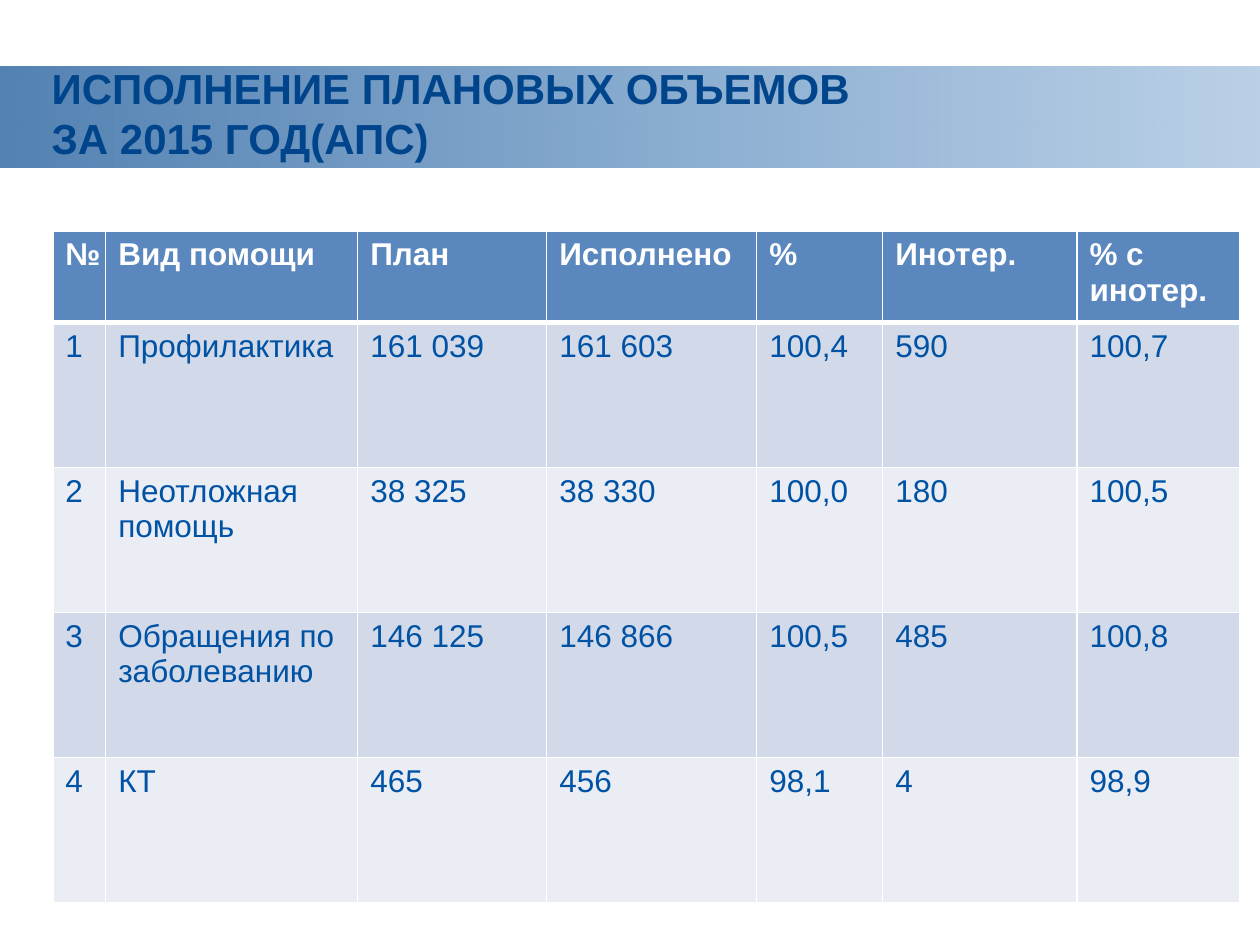
from lxml import etree
from pptx import Presentation
from pptx.dml.color import RGBColor
from pptx.enum import shapes, text
from pptx.oxml import ns
from pptx.util import Pt

NAVY = RGBColor(0x00, 0x47, 0x8F)
BLUE = RGBColor(0x00, 0x52, 0xA4)
TITLE = RGBColor(0x00, 0x45, 0x8B)
HEAD = RGBColor(0x5A, 0x87, 0xBE)
ODD = RGBColor(0xD2, 0xD9, 0xE8)
EVEN = RGBColor(0xEA, 0xED, 0xF4)
WHITE = RGBColor(0xFF, 0xFF, 0xFF)
FONT = "Arial"

COLS = [30.24, 144, 108, 120, 72, 111, 92.88]
HIGH = [52.4, 82.8, 82.8, 82.8, 82.8]
ROWS = [
    ["№", "Вид помощи", "План", "Исполнено", "%", "Инотер.", "% с инотер."],
    ["1", "Профилактика", "161 039", "161 603", "100,4", "590", "100,7"],
    ["2", "Неотложная помощь", "38 325", "38 330", "100,0", "180", "100,5"],
    ["3", "Обращения по заболеванию", "146 125", "146 866", "100,5", "485", "100,8"],
    ["4", "КТ", "465", "456", "98,1", "4", "98,9"],
]


def write(para, words, size, color, bold):
    """Add one styled run to a paragraph."""
    run = para.add_run()
    run.text = words
    font = run.font
    font.name, font.size, font.bold = FONT, Pt(size), bold
    font.color.rgb = color


def band(slide, left, top, width, height):
    """Draw the fading band behind the title."""
    bar = slide.shapes.add_shape(
        shapes.MSO_SHAPE.RECTANGLE, Pt(left), Pt(top), Pt(width), Pt(height))
    bar.shadow.inherit = False
    bar.line.fill.background()
    bar.fill.gradient()
    bar.fill.gradient_angle = 0
    for stop, color, alpha in zip(bar.fill.gradient_stops, (NAVY, BLUE), (68, 27)):
        stop.color.rgb = color
    tags = bar.element.spPr.iter(ns.qn("a:srgbClr"))
    for tag, alpha in zip(tags, (68, 27)):
        etree.SubElement(tag, ns.qn("a:alpha"), val=str(alpha * 1000))
    slide.shapes.element.insert(2, bar.element)


def title(slide, left, top, width, height):
    """Place the heading in the title placeholder."""
    box = slide.shapes.title
    box.left, box.top, box.width, box.height = map(Pt, (left, top, width, height))
    frame = box.text_frame
    frame.word_wrap = True
    frame.auto_size = text.MSO_AUTO_SIZE.NONE
    frame.vertical_anchor = text.MSO_ANCHOR.MIDDLE
    para = frame.paragraphs[0]
    para.alignment = text.PP_ALIGN.LEFT
    write(para, "ИСПОЛНЕНИЕ ПЛАНОВЫХ ОБЪЕМОВ ЗА 2015 ГОД(АПС)", 24, TITLE, True)


def edge(cell, top, base):
    """Give a cell white borders with the given top and base widths."""
    props = cell._tc.get_or_add_tcPr()
    sides = (("lnL", 1), ("lnR", 1), ("lnT", top), ("lnB", base))
    for spot, (side, width) in enumerate(sides):
        line = etree.Element(ns.qn("a:" + side), w=str(Pt(width)))
        fill = etree.SubElement(line, ns.qn("a:solidFill"))
        etree.SubElement(fill, ns.qn("a:srgbClr"), val=str(WHITE))
        props.insert(spot, line)


def table(slide, left, top, width, height):
    """Build the table of planned and delivered volumes."""
    grid = slide.shapes.add_table(
        len(ROWS), len(COLS), Pt(left), Pt(top), Pt(width), Pt(height)).table
    for col, wide in zip(grid.columns, COLS):
        col.width = Pt(wide)
    for r, (row, tall) in enumerate(zip(ROWS, HIGH)):
        grid.rows[r].height = Pt(tall)
        back = HEAD if r == 0 else ODD if r % 2 else EVEN
        for c, words in enumerate(row):
            cell = grid.cell(r, c)
            cell.fill.solid()
            cell.fill.fore_color.rgb = back
            edge(cell, 3 if r == 1 else 1, 3 if r == 0 else 1)
            para = cell.text_frame.paragraphs[0]
            write(para, words, 18, BLUE if r else WHITE, r == 0)


def main():
    """Build and save the slide."""
    deck = Presentation()
    deck.slide_width, deck.slide_height = Pt(720), Pt(540)
    slide = deck.slides.add_slide(deck.slide_layouts[5])
    band(slide, 0, 38.2, 720, 57.6)
    title(slide, 22.3, 19.4, 481.7, 90)
    table(slide, 30.2, 132, sum(COLS), sum(HIGH))
    deck.save("out.pptx")


if __name__ == "__main__":
    main()
